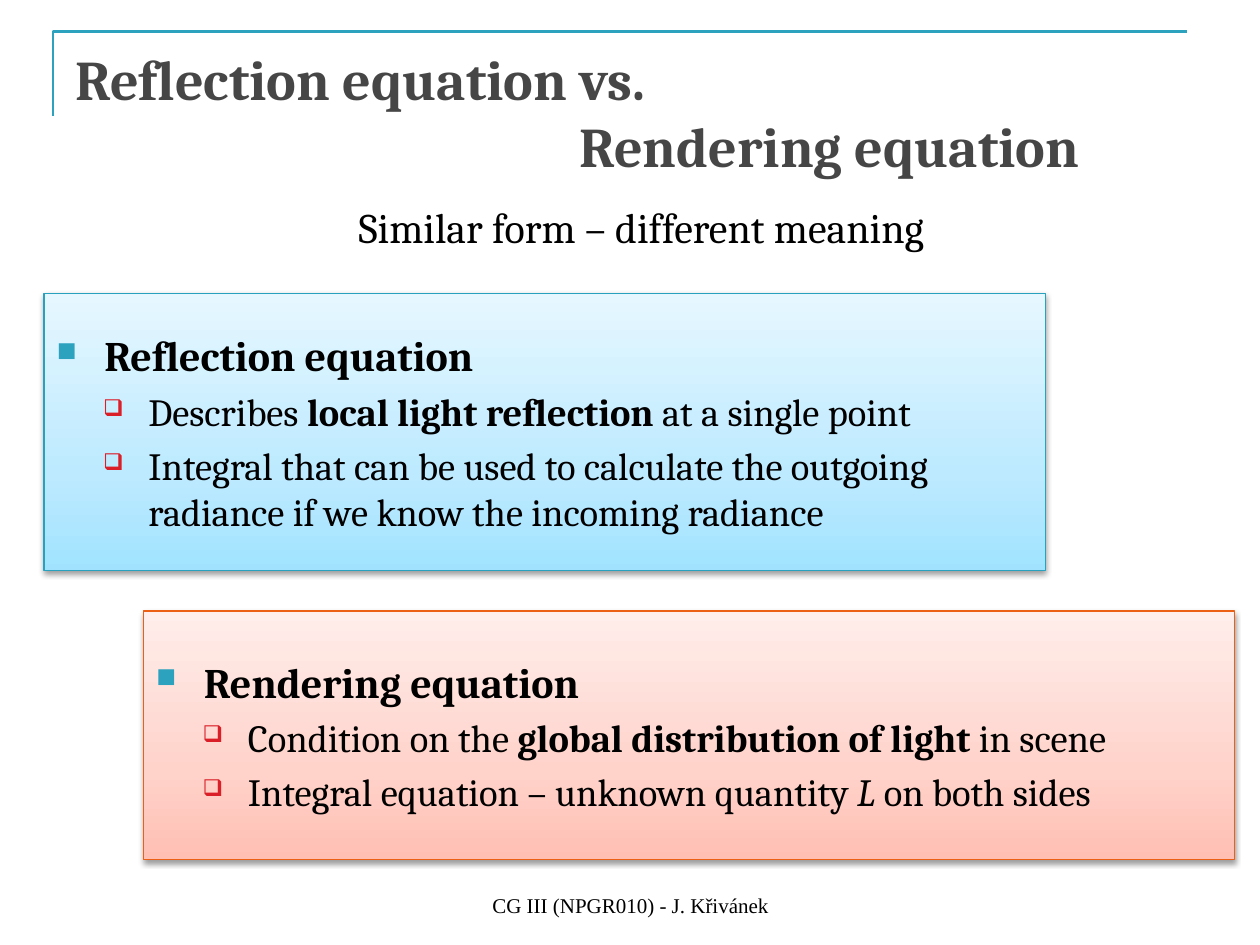
from lxml import etree
from pptx import Presentation
from pptx.dml.color import RGBColor
from pptx.enum.shapes import MSO_SHAPE
from pptx.enum.text import MSO_ANCHOR, PP_ALIGN
from pptx.oxml import parse_xml
from pptx.oxml.ns import nsdecls, qn
from pptx.util import Inches, Pt

RECT = MSO_SHAPE.RECTANGLE
LEFT, CENTER = PP_ALIGN.LEFT, PP_ALIGN.CENTER
TOP, MIDDLE, BOTTOM = MSO_ANCHOR.TOP, MSO_ANCHOR.MIDDLE, MSO_ANCHOR.BOTTOM

THEME = {
    "font": "Cambria", "footer_font": "Times New Roman",
    "text": "000000", "title": "464646", "accent": "2DA2BF", "sub_bullet": "DA1F28",
    "title_size": 32, "head_size": 24, "body_size": 22, "footer_size": 12,
    "blue": {"line": "28A1BE", "stops": [(0, "A1E3FF"), (35, "BDEAFF"), (100, "E6F7FF")]},
    "red": {"line": "EB6015", "stops": [(0, "FFBFB3"), (35, "FFD2CA"), (100, "FFEEEB")]},
}
# character, colour, size in percent, left margin, first-line indent
HEAD_BULLET = ("■", THEME["accent"], 65, 0.38, -0.38)
SUB_BULLET = ("❑", THEME["sub_bullet"], 60, 0.73, -0.36)


def add_text(tf, runs, size, font=THEME["font"], color=THEME["text"], bold=False,
             align=LEFT, anchor=TOP, before=0, margin=0, bullet=None):
    """Append a paragraph; runs are strings or (text, style) with style "b" or "i"."""
    tf.word_wrap = True
    tf.vertical_anchor = anchor
    p = tf.paragraphs[0] if not tf.text else tf.add_paragraph()
    p.alignment = align
    p.space_before = Pt(before)
    pPr = p._p.get_or_add_pPr()
    indent = 0
    if bullet:
        char, bullet_color, percent, margin, indent = bullet
        clr = etree.SubElement(pPr, qn("a:buClr"))
        etree.SubElement(clr, qn("a:srgbClr"), val=bullet_color)
        etree.SubElement(pPr, qn("a:buSzPct"), val=str(percent * 1000))
        etree.SubElement(pPr, qn("a:buChar"), char=char)
    pPr.set("marL", str(Inches(margin)))
    pPr.set("indent", str(Inches(indent)))
    for run in runs:
        text, style = (run, "") if isinstance(run, str) else run
        r = p.add_run()
        r.text = text
        r.font.name, r.font.size = font, Pt(size)
        r.font.bold = bold or style == "b"
        r.font.italic = style == "i"
        r.font.color.rgb = RGBColor.from_string(color)


def style_panel(sp, colors):
    """Apply the vertical gradient, outline and soft shadow of a panel."""
    stops = "".join(f'<a:gs pos="{pos * 1000}"><a:srgbClr val="{rgb}"/></a:gs>'
                    for pos, rgb in colors["stops"])
    sp.line.color.rgb = RGBColor.from_string(colors["line"])
    sp.line.width = Pt(0.75)
    sp.shadow.inherit = False
    spPr = sp._element.spPr
    spPr.find(qn("a:prstGeom")).addnext(parse_xml(
        f'<a:gradFill {nsdecls("a")} rotWithShape="1"><a:gsLst>{stops}</a:gsLst>'
        '<a:lin ang="16200000" scaled="0"/></a:gradFill>'))
    spPr.find(qn("a:effectLst")).append(parse_xml(
        f'<a:outerShdw {nsdecls("a")} blurRad="{Pt(3.1)}" dist="{Pt(1.6)}" dir="5400000" '
        'rotWithShape="0"><a:srgbClr val="000000"><a:alpha val="38000"/></a:srgbClr>'
        '</a:outerShdw>'))


prs = Presentation()
prs.slide_width, prs.slide_height = Inches(10), Inches(7.5)
shapes = prs.slides.add_slide(prs.slide_layouts[6]).shapes

# Corner rule above the title
builder = shapes.build_freeform(Inches(0.42), Inches(0.92))
builder.add_line_segments([(Inches(0.42), Inches(0.25)), (Inches(9.42), Inches(0.25))],
                          close=False)
corner = builder.convert_to_shape()
corner.fill.background()
corner.line.color.rgb = RGBColor.from_string(THEME["accent"])
corner.line.width = Pt(1.5)
corner.shadow.inherit = False

# Panels
panels = [
    ((0.35, 2.33, 7.95, 2.2), "blue", "Reflection equation", [
        ["Describes ", ("local light reflection", "b"), " at a single point"],
        ["Integral that can be used to calculate the outgoing radiance "
         "if we know the incoming radiance"]]),
    ((1.14, 4.85, 8.66, 1.97), "red", "Rendering equation", [
        ["Condition on the ", ("global distribution of light", "b"), " in scene"],
        ["Integral equation – unknown quantity ", ("L ", "i"), "on both sides"]]),
]
for box, palette, heading, points in panels:
    sp = shapes.add_shape(RECT, *map(Inches, box))
    style_panel(sp, THEME[palette])
    size = THEME["head_size"]
    add_text(sp.text_frame, [heading], size, bold=True, anchor=MIDDLE,
             before=size * 0.2, bullet=HEAD_BULLET)
    size = THEME["body_size"]
    for runs in points:
        add_text(sp.text_frame, runs, size, anchor=MIDDLE,
                 before=size * 0.2, bullet=SUB_BULLET)

# Title, its second line set in by four inches
title = shapes.add_textbox(Inches(0.5), Inches(0.3), Inches(9.07), Inches(1.25))
for line, margin in (("Reflection equation vs.", 0), ("Rendering equation", 4)):
    add_text(title.text_frame, [line], THEME["title_size"], color=THEME["title"],
             bold=True, margin=margin)

subtitle = shapes.add_textbox(Inches(0.59), Inches(1.55), Inches(9), Inches(0.55))
add_text(subtitle.text_frame, ["Similar form – different meaning"], THEME["head_size"],
         align=CENTER, before=THEME["head_size"] * 0.2)

footer = shapes.add_textbox(Inches(3.42), Inches(6.83), Inches(3.17), Inches(0.5))
add_text(footer.text_frame, ["CG III (NPGR010) - J. Křivánek"], THEME["footer_size"],
         font=THEME["footer_font"], align=CENTER, anchor=BOTTOM)

prs.save("out.pptx")
